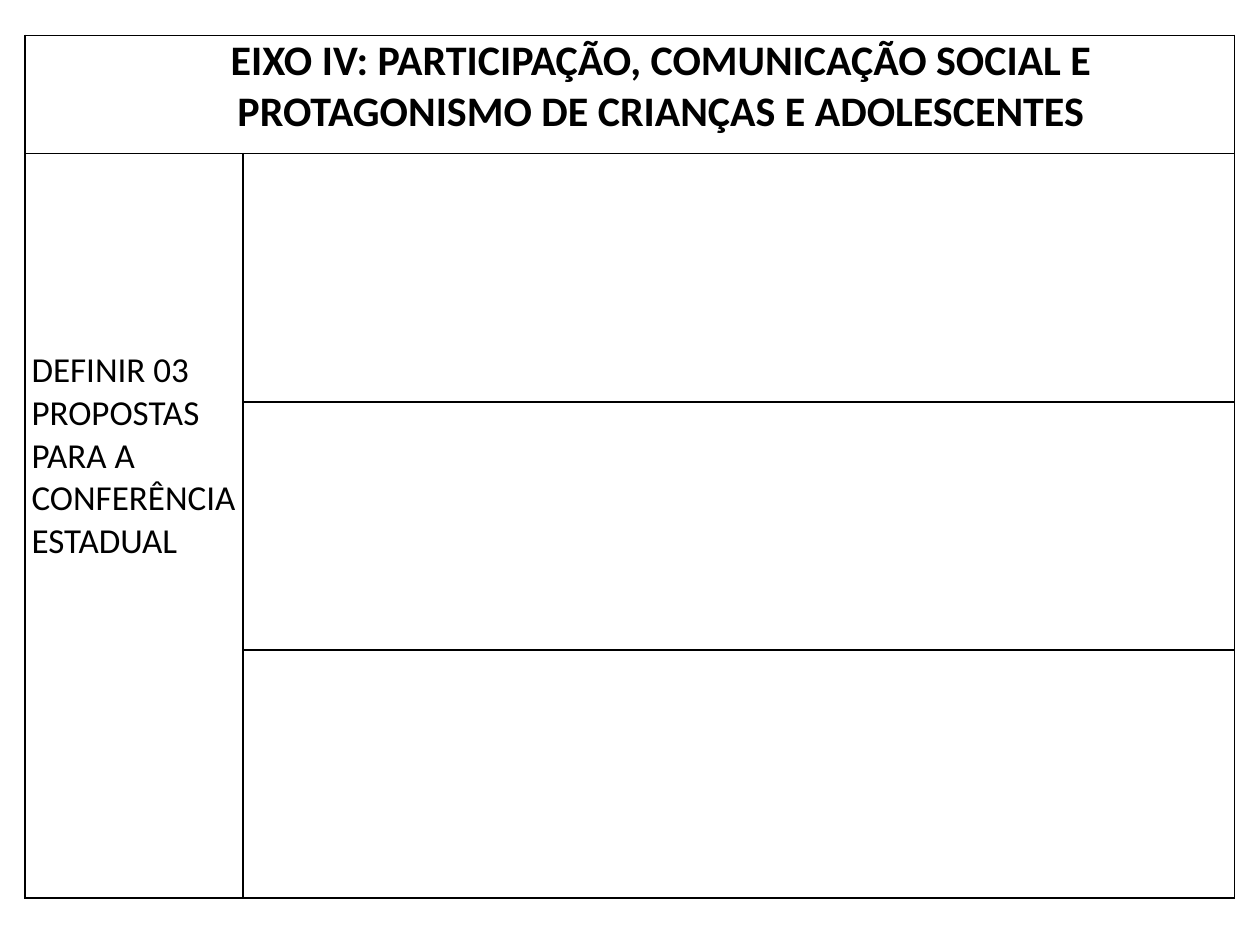
import pptx
import pptx.util
import pptx.dml.color
import pptx.enum.text
import pptx.oxml
import pptx.oxml.ns
import lxml.etree

Inches = pptx.util.Inches
Pt = pptx.util.Pt
BLACK = pptx.dml.color.RGBColor(0x00, 0x00, 0x00)


def add_borders(cell):
    tcPr = cell._tc.get_or_add_tcPr()
    for i, side in enumerate(("lnL", "lnR", "lnT", "lnB")):
        ln = lxml.etree.Element(pptx.oxml.ns.qn("a:" + side), w=str(Pt(1)))
        fill = lxml.etree.SubElement(ln, pptx.oxml.ns.qn("a:solidFill"))
        lxml.etree.SubElement(fill, pptx.oxml.ns.qn("a:srgbClr"), val=str(BLACK))
        tcPr.insert(i, ln)


def set_text(cell, text, size, bold):
    cell.text_frame.text = text
    p = cell.text_frame.paragraphs[0]
    font = p.runs[0].font
    font.name = "Calibri"
    font.size = Pt(size)
    font.bold = bold
    font.color.rgb = BLACK
    return p


prs = pptx.Presentation()
prs.slide_width = Inches(10)
prs.slide_height = Inches(7.5)
s = prs.slides.add_slide(prs.slide_layouts[6])

col_widths = [1.73, 7.87]
row_heights = [0.94] + [1.97] * 3
frame = s.shapes.add_table(
    len(row_heights), len(col_widths), Inches(0.2), Inches(0.28),
    Inches(sum(col_widths)), Inches(sum(row_heights)))
table = frame.table
table.first_row = False
table.horz_banding = False
for col, width in zip(table.columns, col_widths):
    col.width = Inches(width)
for row, height in zip(table.rows, row_heights):
    row.height = Inches(height)

for cell in table.iter_cells():
    cell.fill.background()
    cell.margin_left = cell.margin_right = Inches(0.05)
    cell.margin_top = cell.margin_bottom = 0
    add_borders(cell)

heading = table.cell(0, 0)
heading.merge(table.cell(0, 1))
p = set_text(heading, "EIXO IV: PARTICIPAÇÃO, COMUNICAÇÃO SOCIAL E PROTAGONISMO DE CRIANÇAS E ADOLESCENTES", 24, True)
p.alignment = pptx.enum.text.PP_ALIGN.CENTER
p._p.get_or_add_pPr().set("marL", str(Inches(0.49)))

task = table.cell(1, 0)
task.merge(table.cell(3, 0))
task.margin_top = Inches(1.55)
set_text(task, "DEFINIR 03 PROPOSTAS PARA A CONFERÊNCIA ESTADUAL", 20, False)

prs.save("out.pptx")
